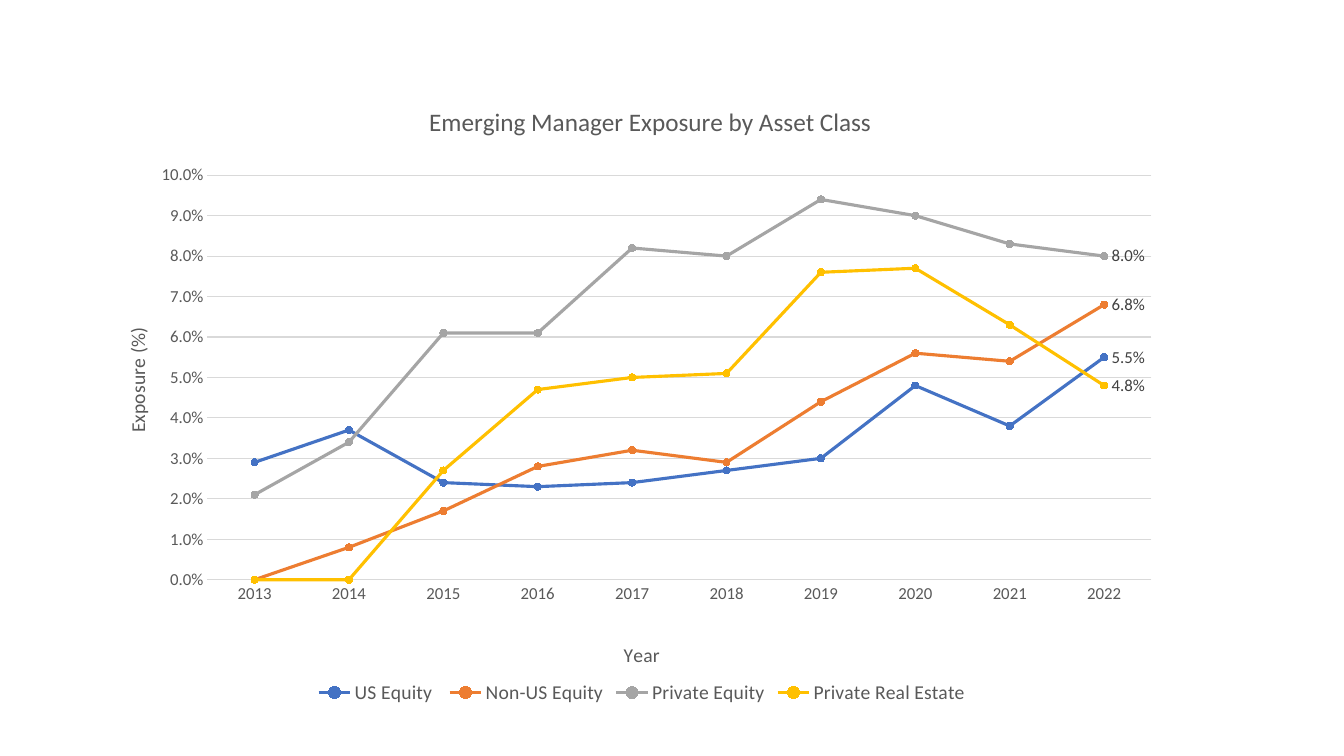
import pptx
import pptx.chart.data
import pptx.dml.color
import pptx.enum.chart
import pptx.oxml
import pptx.oxml.ns
import pptx.util

Pt = pptx.util.Pt

COLORS = {"text": "595959", "label": "404040", "rule": "D9D9D9"}
YEARS = [str(year) for year in range(2013, 2023)]
# Name, line colour, yearly exposure in percent
EXPOSURE = [
    ("US Equity ", "4472C4", [2.9, 3.7, 2.4, 2.3, 2.4, 2.7, 3.0, 4.8, 3.8, 5.5]),
    ("Non-US Equity", "ED7D31", [0, 0.8, 1.7, 2.8, 3.2, 2.9, 4.4, 5.6, 5.4, 6.8]),
    ("Private Equity", "A5A5A5", [2.1, 3.4, 6.1, 6.1, 8.2, 8.0, 9.4, 9.0, 8.3, 8.0]),
    ("Private Real Estate", "FFC000", [0, 0, 2.7, 4.7, 5.0, 5.1, 7.6, 7.7, 6.3, 4.8]),
]


def rgb(value):
    return pptx.dml.color.RGBColor.from_string(value)


class ChartSlide:
    """Holds the style and the current slide."""

    def __init__(self, prs, font="Calibri"):
        self.font = font
        self.slide = prs.slides.add_slide(prs.slide_layouts[6])

    def style_font(self, font, size, color=COLORS["text"]):
        font.name, font.size, font.bold = self.font, Pt(size), False
        font.color.rgb = rgb(color)

    def style_line(self, line, color, width):
        line.color.rgb = rgb(color)
        line.width = Pt(width)

    def place(self, element, index, inner=False, **fractions):
        """Set a manual layout, in fractions of the chart area."""
        for old in element.findall(pptx.oxml.ns.qn("c:layout")):
            element.remove(old)
        parts = '<c:layoutTarget val="inner"/>' if inner else ""
        parts += '<c:xMode val="edge"/><c:yMode val="edge"/>'
        parts += "".join(f'<c:{k} val="{v}"/>' for k, v in fractions.items())
        element.insert(index, pptx.oxml.parse_xml(
            f'<c:layout {pptx.oxml.ns.nsdecls("c")}>'
            f"<c:manualLayout>{parts}</c:manualLayout></c:layout>"))

    def title(self, title, text, size, x, y, rotation=0):
        tf = title.text_frame
        tf.text = text
        self.style_font(tf.paragraphs[0].runs[0].font, size)
        tf._txBody.bodyPr.set("rot", str(rotation * 60000))
        self.place(title._element, 1, x=x, y=y)

    def axis(self, axis, text, x, y, rotation=0):
        axis.major_tick_mark = axis.minor_tick_mark = pptx.enum.chart.XL_TICK_MARK.NONE
        self.style_font(axis.tick_labels.font, 12)
        self.title(axis.axis_title, text, 14, x, y, rotation)

    def series(self, series, color):
        series.smooth = False
        self.style_line(series.format.line, color, 2.25)
        marker = series.marker
        marker.style, marker.size = pptx.enum.chart.XL_MARKER_STYLE.CIRCLE, 5
        marker.format.fill.solid()
        marker.format.fill.fore_color.rgb = rgb(color)
        self.style_line(marker.format.line, color, 0.75)
        # Only the last year carries a label
        series.data_labels.show_value = False
        label = series.points[len(YEARS) - 1].data_label
        self.style_font(label.font, 12, COLORS["label"])
        label.position = pptx.enum.chart.XL_LABEL_POSITION.RIGHT

    def line_chart(self, left, top, width, height):
        data = pptx.chart.data.CategoryChartData(number_format="0.0%")
        data.categories = YEARS
        for name, _, values in EXPOSURE:
            data.add_series(name, [round(v / 100, 3) for v in values])
        chart = self.slide.shapes.add_chart(
            pptx.enum.chart.XL_CHART_TYPE.LINE_MARKERS,
            Pt(left), Pt(top), Pt(width), Pt(height), data).chart
        self.style_font(chart.font, 10)
        for series, (_, color, _) in zip(chart.plots[0].series, EXPOSURE):
            self.series(series, color)
        plot_area = chart._chartSpace.chart.plotArea
        self.place(plot_area, 0, inner=True, x=0.1, y=0.168, w=0.869, h=0.631)
        return chart


def main():
    prs = pptx.Presentation()
    prs.slide_width, prs.slide_height = Pt(960), Pt(540)
    s = ChartSlide(prs)

    # Chart and heading
    chart = s.line_chart(70.5, 48.25, 776, 458)
    s.title(chart.chart_title, "Emerging Manager Exposure by Asset Class", 18, 0.3, 0.05)
    chart.chart_title.include_in_layout = False

    # Year axis
    s.axis(chart.category_axis, "Year", 0.48, 0.89)
    s.style_line(chart.category_axis.format.line, COLORS["rule"], 0.75)

    # Exposure axis
    value_axis = chart.value_axis
    s.axis(value_axis, "Exposure (%)", 0.02, 0.4, rotation=-90)
    value_axis.minimum_scale, value_axis.maximum_scale = 0, 0.1
    value_axis.major_unit = 0.01
    value_axis.tick_labels.number_format = "0.0%"
    value_axis.tick_labels.number_format_is_linked = False
    value_axis.format.line.fill.background()
    s.style_line(value_axis.major_gridlines.format.line, COLORS["rule"], 0.75)

    # Legend
    chart.has_legend = True
    chart.legend.position = pptx.enum.chart.XL_LEGEND_POSITION.BOTTOM
    chart.legend.include_in_layout = False
    s.style_font(chart.legend.font, 14)

    prs.save("out.pptx")


if __name__ == "__main__":
    main()
